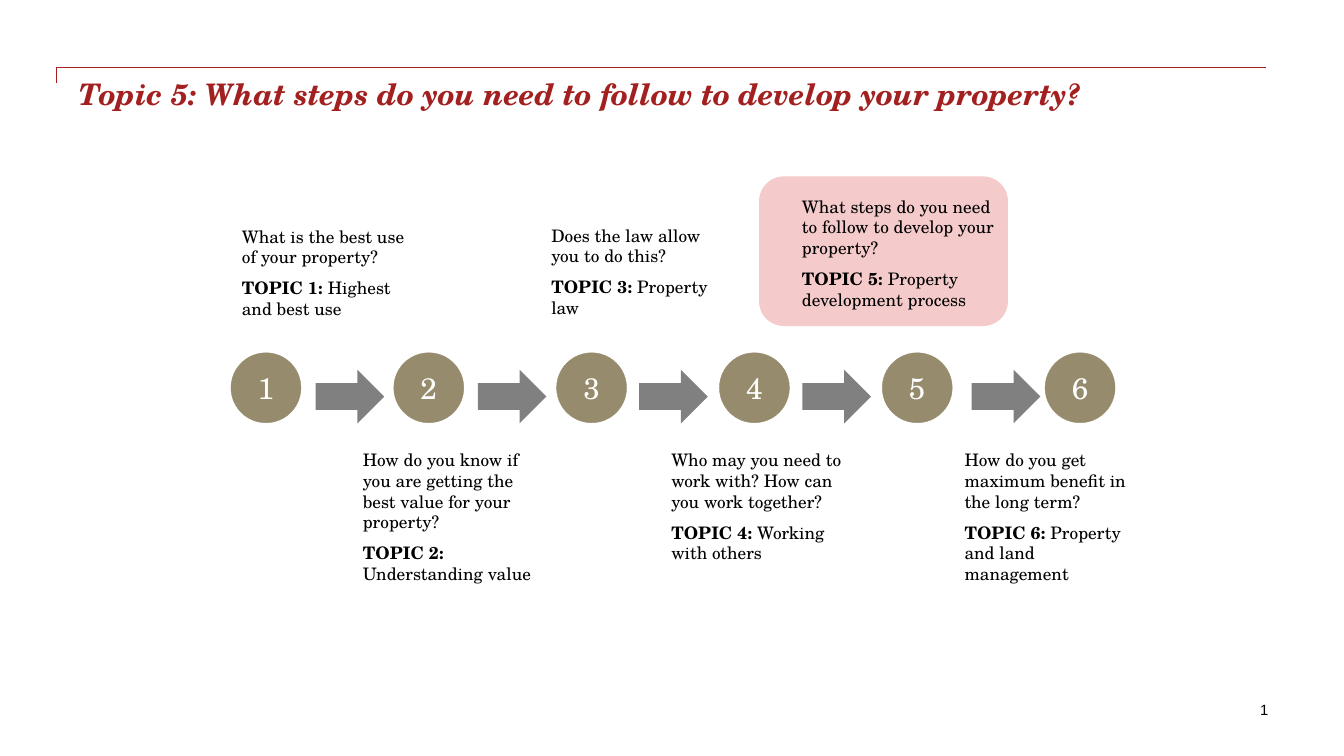
"""Builds the slide that places topic 5 within the six steps of property development."""

import dataclasses
import typing

import pptx
import pptx.dml.color
import pptx.enum.shapes
import pptx.enum.text
import pptx.oxml
import pptx.oxml.ns
import pptx.util

Pt = pptx.util.Pt
Shapes = pptx.enum.shapes.MSO_SHAPE
Align = pptx.enum.text.PP_ALIGN
Anchor = pptx.enum.text.MSO_ANCHOR

COLOURS = {
    "heading": "A32020",
    "highlight": "EA9696",
    "step": "968C6D",
    "arrow": "808080",
    "text": "000000",
    "number": "FFFFFF",
}
SERIF = "TeX Gyre Schola"
TITLE_FONT = {"name": SERIF, "size": Pt(21.2), "bold": True, "italic": True}
NUMBER_FONT = {"name": SERIF, "size": Pt(21.2)}
TOPIC_FONT = {"name": SERIF, "size": Pt(12.3)}
PAGE_FONT = {"name": "Arial", "size": Pt(10.6)}
NO_MARGINS = dict.fromkeys(("margin_left", "margin_top", "margin_right", "margin_bottom"), 0)
TOPIC_FRAME = {**NO_MARGINS, "word_wrap": True, "vertical_anchor": Anchor.TOP}
TITLE_FRAME = {**TOPIC_FRAME, "auto_size": pptx.enum.text.MSO_AUTO_SIZE.NONE}
NUMBER_FRAME = {**NO_MARGINS, "word_wrap": True, "vertical_anchor": Anchor.MIDDLE}
PAGE_FRAME = {"word_wrap": True, "vertical_anchor": Anchor.MIDDLE}

STEP_LEFT, STEP_TOP, STEP_SIZE, STEP_PITCH = 165, 252, 50, 116.3
ARROW_TOP, ARROW_WIDTH, ARROW_HEIGHT = 264.2, 49, 38.2
ARROW_LEFTS = (225.4, 341.3, 456.5, 573.1, 694.1)


@dataclasses.dataclass(frozen=True)
class Box:
    """A rectangle in points."""

    left: float
    top: float
    width: float
    height: float

    def lengths(self) -> tuple:
        """Return the four values as lengths."""
        return tuple(Pt(value) for value in dataclasses.astuple(self))


@dataclasses.dataclass(frozen=True)
class Topic:
    """A question with the topic that answers it."""

    question: str
    subject: str
    box: Box


TOPICS = (
    Topic("What is the best use of your property?", "Highest and best use",
          Box(172.8, 161.3, 125.3, 87.8)),
    Topic("How do you know if you are getting the best value for your property?",
          "Understanding value", Box(259.2, 321.1, 125.3, 87.8)),
    Topic("Does the law allow you to do this?", "Property law",
          Box(393.8, 160.6, 125.3, 69.1)),
    Topic("Who may you need to work with? How can you work together?",
          "Working with others", Box(479.5, 321.1, 125.3, 87.8)),
    Topic("What steps do you need to follow to develop your property?",
          "Property development process", Box(572.8, 139.9, 142.6, 87.8)),
    Topic("How do you get maximum benefit in the long term?",
          "Property and land management", Box(689, 321.1, 125.3, 87.8)),
)


def apply(target: typing.Any, values: dict) -> None:
    """Set every named value on the target."""
    for name, value in values.items():
        setattr(target, name, value)


def rgb(role: str) -> pptx.dml.color.RGBColor:
    """Return the colour of a role."""
    return pptx.dml.color.RGBColor.from_string(COLOURS[role])


def add_run(paragraph: typing.Any, text: str, font: dict, role: str) -> typing.Any:
    """Add formatted text to a paragraph."""
    run = paragraph.add_run()
    run.text = text
    apply(run.font, font)
    run.font.color.rgb = rgb(role)
    return run


def add_filled(slide: typing.Any, preset: Shapes, box: Box, role: str) -> typing.Any:
    """Add a flat shape without outline."""
    shape = slide.shapes.add_shape(preset, *box.lengths())
    shape.shadow.inherit = False
    shape.fill.solid()
    shape.fill.fore_color.rgb = rgb(role)
    shape.line.fill.background()
    return shape


def add_rule(slide: typing.Any) -> None:
    """Draw the bent line above the heading."""
    builder = slide.shapes.build_freeform(Pt(40.3), Pt(59))
    builder.add_line_segments([(Pt(40.3), Pt(48.2)), (Pt(904.3), Pt(48.2))], close=False)
    rule = builder.convert_to_shape()
    rule.shadow.inherit = False
    rule.fill.background()
    rule.line.color.rgb = rgb("heading")
    rule.line.width = Pt(1)


def add_highlight(slide: typing.Any) -> None:
    """Draw the half-transparent panel behind the current topic."""
    panel = add_filled(slide, Shapes.ROUNDED_RECTANGLE, Box(542.2, 126, 177.8, 106.9), "highlight")
    colour = panel.fill._xPr.find(".//" + pptx.oxml.ns.qn("a:srgbClr"))
    alpha = pptx.oxml.parse_xml(f'<a:alpha {pptx.oxml.ns.nsdecls("a")} val="50000"/>')
    colour.append(alpha)


def add_title(slide: typing.Any) -> None:
    """Fill and place the title."""
    title = slide.shapes.title
    apply(title, dict(zip(("left", "top", "width", "height"), Box(56.2, 54, 848.2, 72).lengths())))
    apply(title.text_frame, TITLE_FRAME)
    heading = title.text_frame.paragraphs[0]
    heading.alignment = Align.LEFT
    add_run(heading, "Topic 5: What steps do you need to follow to develop your property?",
            TITLE_FONT, "heading")


def add_step(slide: typing.Any, number: int) -> None:
    """Draw a numbered circle."""
    left = STEP_LEFT + (number - 1) * STEP_PITCH
    step = add_filled(slide, Shapes.OVAL, Box(left, STEP_TOP, STEP_SIZE, STEP_SIZE), "step")
    step.line.color.rgb = rgb("step")
    step.line.width = Pt(0.25)
    apply(step.text_frame, NUMBER_FRAME)
    label = step.text_frame.paragraphs[0]
    label.alignment = Align.CENTER
    add_run(label, str(number), NUMBER_FONT, "number")


def add_topic(slide: typing.Any, number: int, topic: Topic) -> None:
    """Write a question and its topic."""
    frame = slide.shapes.add_textbox(*topic.box.lengths()).text_frame
    apply(frame, TOPIC_FRAME)
    question, answer = frame.paragraphs[0], frame.add_paragraph()
    question.space_after = answer.space_after = Pt(7.5)
    add_run(question, topic.question, TOPIC_FONT, "text")
    add_run(answer, f"TOPIC {number}: ", {**TOPIC_FONT, "bold": True}, "text")
    add_run(answer, topic.subject, TOPIC_FONT, "text")


def add_page_number(slide: typing.Any) -> None:
    """Add the slide number as a field."""
    frame = slide.shapes.add_textbox(*Box(650.9, 494.6, 262.1, 25.2).lengths()).text_frame
    apply(frame, PAGE_FRAME)
    paragraph = frame.paragraphs[0]
    paragraph.alignment = Align.RIGHT
    field = add_run(paragraph, "1", PAGE_FONT, "text")._r
    field.tag = pptx.oxml.ns.qn("a:fld")
    field.set("id", "{B6F15528-21DE-4FAA-801E-634DDDAF4B2B}")
    field.set("type", "slidenum")


def main() -> None:
    """Build and save the presentation."""
    presentation = pptx.Presentation()
    apply(presentation, {"slide_width": Pt(960), "slide_height": Pt(540)})
    slide = presentation.slides.add_slide(presentation.slide_layouts[5])
    add_rule(slide)
    add_highlight(slide)
    add_title(slide)
    for number, topic in enumerate(TOPICS, 1):
        add_step(slide, number)
        add_topic(slide, number, topic)
    for left in ARROW_LEFTS:
        add_filled(slide, Shapes.RIGHT_ARROW, Box(left, ARROW_TOP, ARROW_WIDTH, ARROW_HEIGHT), "arrow")
    add_page_number(slide)
    presentation.save("out.pptx")


if __name__ == "__main__":
    main()
